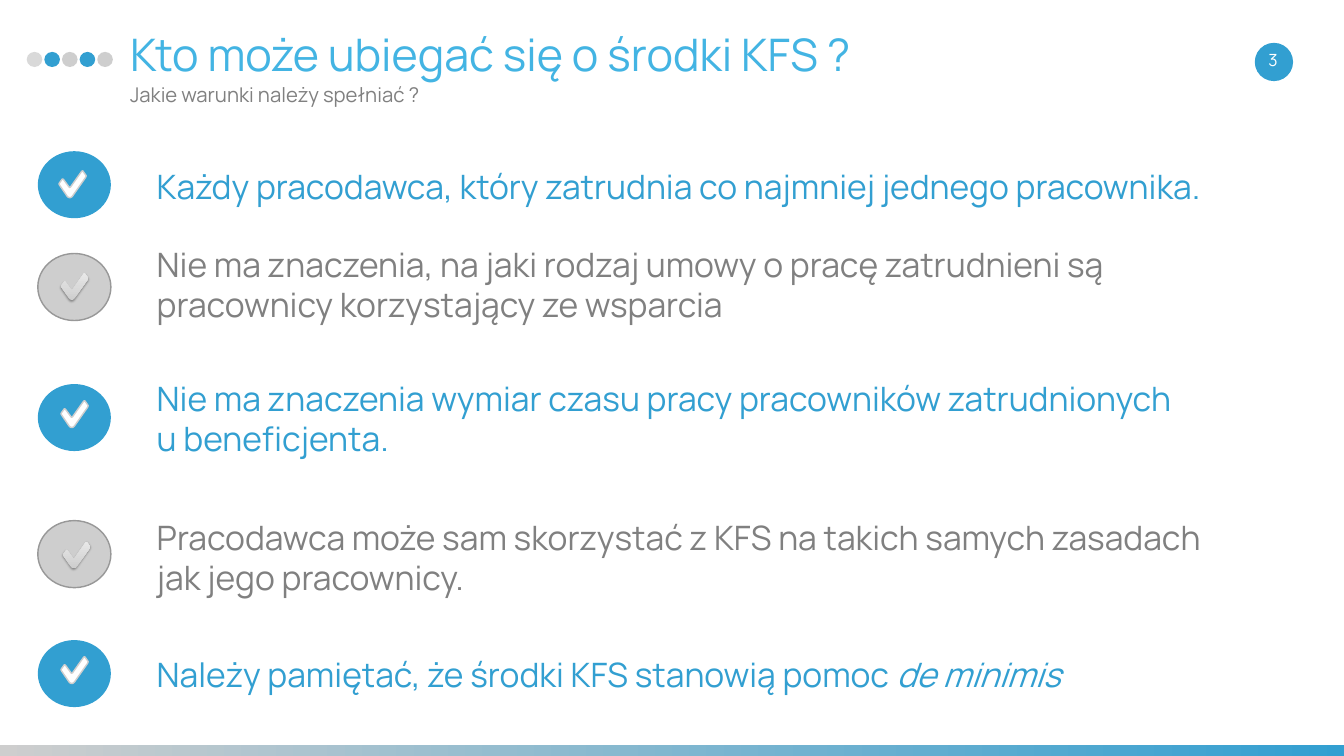
import pptx
import pptx.util
import pptx.dml.color
import pptx.enum.shapes
import pptx.enum.text
from pptx.util import Inches
import lxml.etree

FONT = "Manrope"
BLUE, GREY, SILVER, WHITE = "329FD1", "808080", "CECECE", "FFFFFF"
SHAPE = pptx.enum.shapes.MSO_SHAPE
TEXT = pptx.enum.text
TICK = [
    (20, 53), (18, 52), (16, 50), (1, 28), (0, 26), (1, 24), (6, 17), (7, 16), (9, 17),
    (20, 32), (21, 33), (23, 32), (45, 1), (47, 0), (48, 1), (53, 8), (54, 10), (53, 13),
    (27, 50), (25, 52), (23, 53),
]
ROWS = [
    (3, (0.42, 0.39), (0.17, 22.77, 1.08), True,
     "Każdy pracodawca, który zatrudnia co najmniej jednego pracownika.", ""),
    (5.03, (0.46, 0.39), (-0.33, 22.76, 1.88), False,
     "Nie ma znaczenia, na jaki rodzaj umowy o pracę zatrudnieni są\n"
     "pracownicy korzystający ze wsparcia", ""),
    (7.62, (0.46, 0.33), (-0.25, 22.76, 1.88), True,
     "Nie ma znaczenia wymiar czasu pracy pracowników zatrudnionych \vu beneficjenta.", ""),
    (10.33, (0.5, 0.42), (-0.21, 21.85, 1.88), False,
     "Pracodawca może sam skorzystać z KFS na takich samych zasadach jak jego pracownicy.", ""),
    (12.7, (0.46, 0.33), (0.14, 22.76, 1.08), True,
     "Należy pamiętać, że środki KFS stanowią pomoc ", "de minimis"),
]


def rgb(code):
    """Turn a hex string into a colour."""
    return pptx.dml.color.RGBColor.from_string(code)


def paint(shape, fill, line=None, angle=0):
    """Set a plain or two-colour fill and an optional outline."""
    shape.shadow.inherit = False
    if isinstance(fill, tuple):
        shape.fill.gradient()
        shape.fill.gradient_angle = angle
        for stop, code in zip(shape.fill.gradient_stops, fill):
            stop.color.rgb = rgb(code)
    else:
        shape.fill.solid()
        shape.fill.fore_color.rgb = rgb(fill)
    if line:
        shape.line.color.rgb = rgb(line)
        shape.line.width = pptx.util.Pt(2)
    else:
        shape.line.fill.background()


def add_form(shapes, kind, box, fill, line=None):
    """Add a painted preset shape."""
    shape = shapes.add_shape(kind, *map(Inches, box))
    paint(shape, fill, line)
    return shape


def add_shade(shape):
    """Give a shape a soft shadow below it."""
    space = "http://schemas.openxmlformats.org/drawingml/2006/main"
    effects = shape._element.spPr.find(f"{{{space}}}effectLst")
    effects.append(lxml.etree.fromstring(
        f'<a:outerShdw xmlns:a="{space}" blurRad="39370" dist="22860" dir="5400000"'
        ' algn="t" rotWithShape="0"><a:srgbClr val="000000"><a:alpha val="35000"/>'
        '</a:srgbClr></a:outerShdw>'))


def add_text(shapes, box, text, size, color, tail=""):
    """Add a wrapped text box with an optional italic tail."""
    frame = shapes.add_textbox(*map(Inches, box)).text_frame
    frame.word_wrap = True
    frame.margin_left = frame.margin_right = Inches(0.27)
    frame.margin_top = frame.margin_bottom = Inches(0.13)
    frame.text = text
    if tail:
        run = frame.paragraphs[-1].add_run()
        run.text = tail
        run.font.italic = True
    for para in frame.paragraphs:
        for run in para.runs:
            run.font.name = FONT
            run.font.size = pptx.util.Pt(size)
            run.font.color.rgb = rgb(color)
    return frame


def add_dots(shapes, left, top):
    """Draw the row of five dots beside the title."""
    group = shapes.add_group_shape().shapes
    for i, color in enumerate(["D9D9D9", BLUE, SILVER, BLUE, SILVER]):
        add_form(group, SHAPE.OVAL, (left + 0.35 * i, top, 0.31, 0.3), color)


def add_head(shapes, left, top):
    """Place the dots, title, subtitle and page number."""
    add_dots(shapes, left, top + 0.62)
    add_text(shapes, (left + 1.78, top, 21.25, 1.6),
             "Kto może ubiegać się o środki KFS ?", 64, "43B4E3")
    add_text(shapes, (left + 1.78, top + 1.09, 21.25, 0.85),
             "Jakie warunki należy spełniać ?", 29, GREY)
    add_form(shapes, SHAPE.OVAL, (left + 24.37, top + 0.44, 0.76, 0.76), BLUE)
    frame = add_text(shapes, (left + 24.15, top + 0.37, 1.16, 0.8), "3", 24, WHITE)
    frame.vertical_anchor = TEXT.MSO_ANCHOR.MIDDLE
    frame.paragraphs[0].alignment = TEXT.PP_ALIGN.CENTER


def add_badge(shapes, left, top, shift, active):
    """Draw a round badge with a tick."""
    group = shapes.add_group_shape().shapes
    add_form(group, SHAPE.OVAL, (left, top, 1.45, 1.33),
             BLUE if active else SILVER, None if active else "989898")
    pen = group.build_freeform(*TICK[0], scale=Inches(0.01))
    pen.add_line_segments(TICK[1:], close=True)
    tick = pen.convert_to_shape(Inches(left + shift[0]), Inches(top + shift[1]))
    if active:
        paint(tick, WHITE, SILVER)
    else:
        paint(tick, (SILVER, "E8E8E8"), angle=90)
        add_shade(tick)


def add_row(shapes, left, top, shift, area, active, text, tail):
    """Place one condition with its badge."""
    drop, width, height = area
    add_badge(shapes, left, top, shift, active)
    frame = add_text(shapes, (left + 2.09, top + drop, width, height),
                     text, 48, BLUE if active else GREY, tail)
    frame.auto_size = TEXT.MSO_AUTO_SIZE.SHAPE_TO_FIT_TEXT


def main():
    """Build and save the slide."""
    deck = pptx.Presentation()
    deck.slide_width, deck.slide_height = Inches(26.67), Inches(15)
    shapes = deck.slides.add_slide(deck.slide_layouts[6]).shapes
    add_form(shapes, SHAPE.RECTANGLE, (0, 14.79, 26.67, 0.38), (SILVER, BLUE))
    add_head(shapes, 0.53, 0.41)
    for row in ROWS:
        add_row(shapes, 0.75, *row)
    deck.save("out.pptx")


if __name__ == "__main__":
    main()
